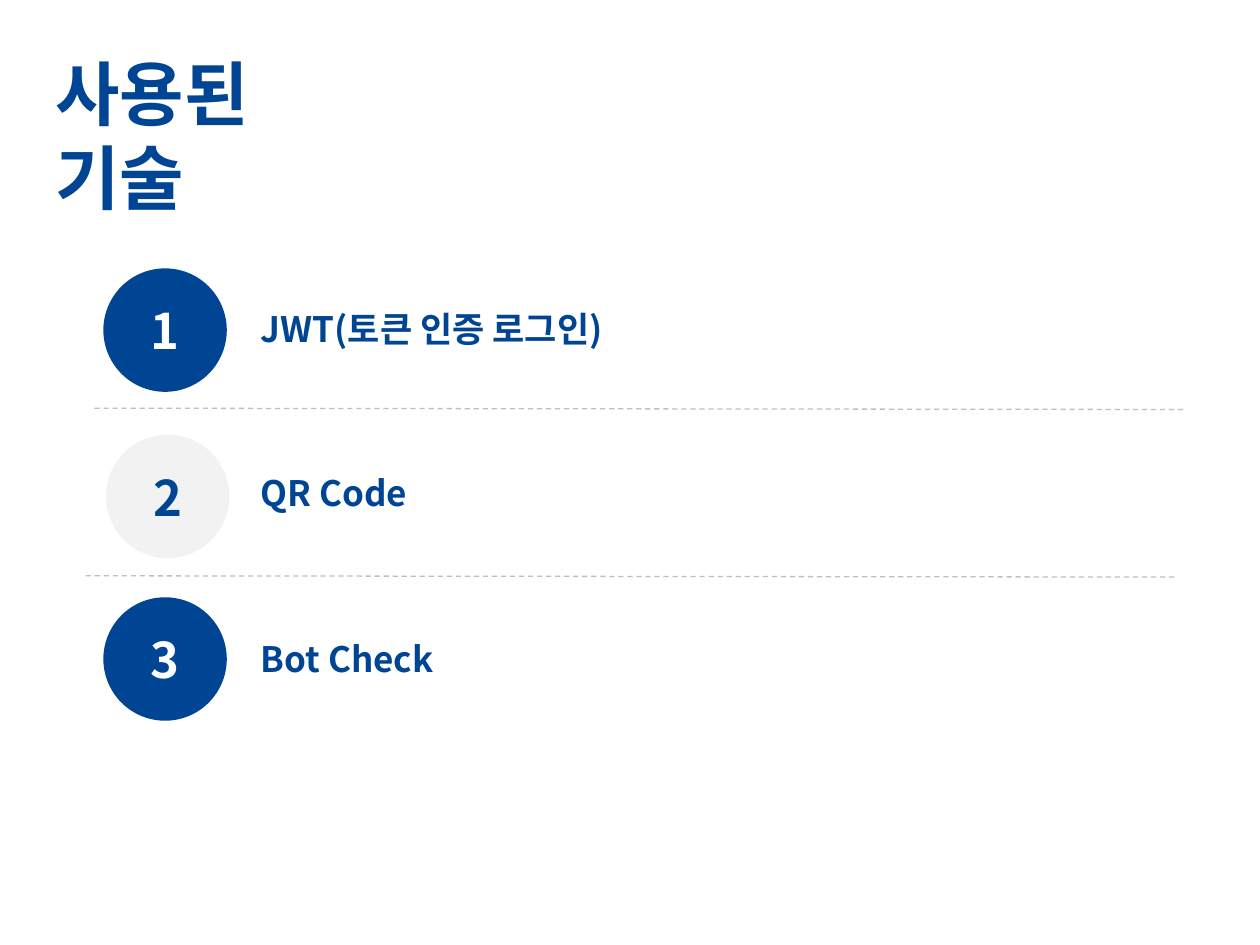
from dataclasses import dataclass

from lxml.etree import SubElement
from pptx import Presentation
from pptx.dml.color import RGBColor
from pptx.enum.dml import MSO_LINE
from pptx.enum.shapes import MSO_CONNECTOR, MSO_SHAPE
from pptx.enum.text import MSO_ANCHOR, MSO_AUTO_SIZE, PP_ALIGN
from pptx.oxml.ns import qn
from pptx.util import Inches, Pt

FONT = "Noto Sans CJK KR"
BLUE, PALE, WHITE, GREY = "004593", "F2F2F2", "FFFFFF", "BFBFBF"
DIAMETER = 0.98


@dataclass
class Technology:
    name: str
    circle_left: float
    circle_top: float
    label_top: float
    fill: str
    number_color: str


@dataclass
class Divider:
    left: float
    top: float


TECHNOLOGIES = [
    Technology("JWT(토큰 인증 로그인)", 0.82, 2.13, 2.39, BLUE, WHITE),
    Technology("QR Code", 0.84, 3.45, 3.69, PALE, BLUE),
    Technology("Bot Check", 0.82, 4.74, 5.01, BLUE, WHITE),
]
DIVIDERS = [Divider(0.75, 3.24), Divider(0.68, 4.57)]


def color(value: str) -> RGBColor:
    return RGBColor.from_string(value)


def write(shape, text: str, *, size: float, ink: str = BLUE,
          align=PP_ALIGN.LEFT, anchor=MSO_ANCHOR.TOP) -> None:
    frame = shape.text_frame
    frame.word_wrap = True
    frame.auto_size = MSO_AUTO_SIZE.NONE
    frame.vertical_anchor = anchor
    frame.margin_left = frame.margin_right = Inches(0.1)
    frame.margin_top = frame.margin_bottom = Inches(0.05)
    para = frame.paragraphs[0]
    para.alignment = align
    span = para.add_run()
    span.text = text
    span.font.size = Pt(size)
    span.font.bold = True
    span.font.name = FONT
    span.font.color.rgb = color(ink)
    properties = span.font._element
    SubElement(properties, qn("a:ea")).set("typeface", FONT)


def add_title(page, text: str) -> None:
    title = page.shapes.title
    title.left, title.top = Inches(0.34), Inches(0.35)
    title.width, title.height = Inches(2.5), Inches(0.77)
    write(title, text, size=40)


def add_technology(page, number: int, item: Technology) -> None:
    circle = page.shapes.add_shape(
        MSO_SHAPE.OVAL, Inches(item.circle_left), Inches(item.circle_top),
        Inches(DIAMETER), Inches(DIAMETER))
    circle.shadow.inherit = False
    circle.fill.solid()
    circle.fill.fore_color.rgb = color(item.fill)
    circle.line.fill.background()
    write(circle, str(number), size=28, ink=item.number_color,
          align=PP_ALIGN.CENTER, anchor=MSO_ANCHOR.MIDDLE)
    label = page.shapes.add_textbox(
        Inches(1.97), Inches(item.label_top), Inches(6.54), Inches(0.44))
    write(label, item.name, size=20)


def add_divider(page, divider: Divider) -> None:
    line = page.shapes.add_connector(
        MSO_CONNECTOR.STRAIGHT, Inches(divider.left), Inches(divider.top),
        Inches(divider.left + 8.65), Inches(divider.top + 0.01))
    line.line.color.rgb = color(GREY)
    line.line.width = Pt(0.75)
    line.line.dash_style = MSO_LINE.DASH
    SubElement(line._element.spPr, qn("a:effectLst"))


def main() -> None:
    deck = Presentation()
    deck.slide_width, deck.slide_height = Inches(10), Inches(7.5)
    page = deck.slides.add_slide(deck.slide_layouts[5])
    add_title(page, "사용된 기술")
    for number, item in enumerate(TECHNOLOGIES, start=1):
        add_technology(page, number, item)
    for divider in DIVIDERS:
        add_divider(page, divider)
    deck.save("out.pptx")


if __name__ == "__main__":
    main()
